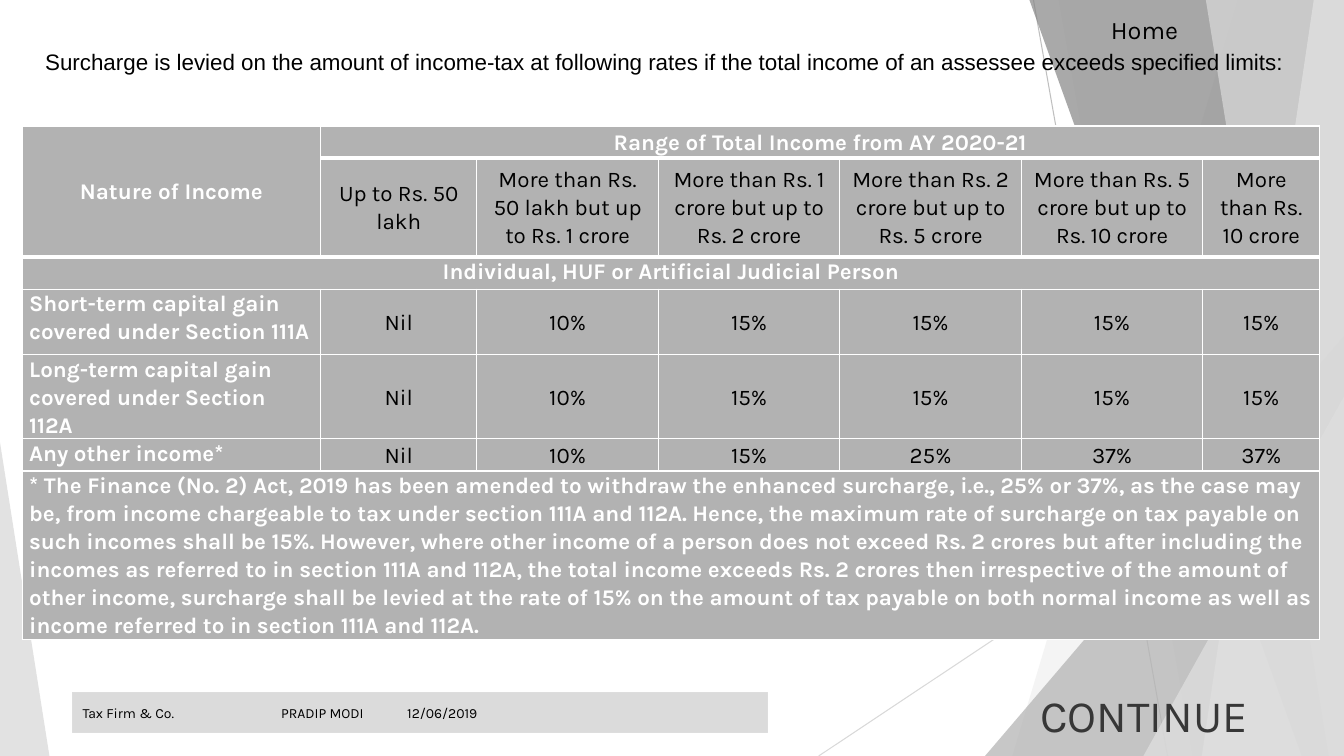
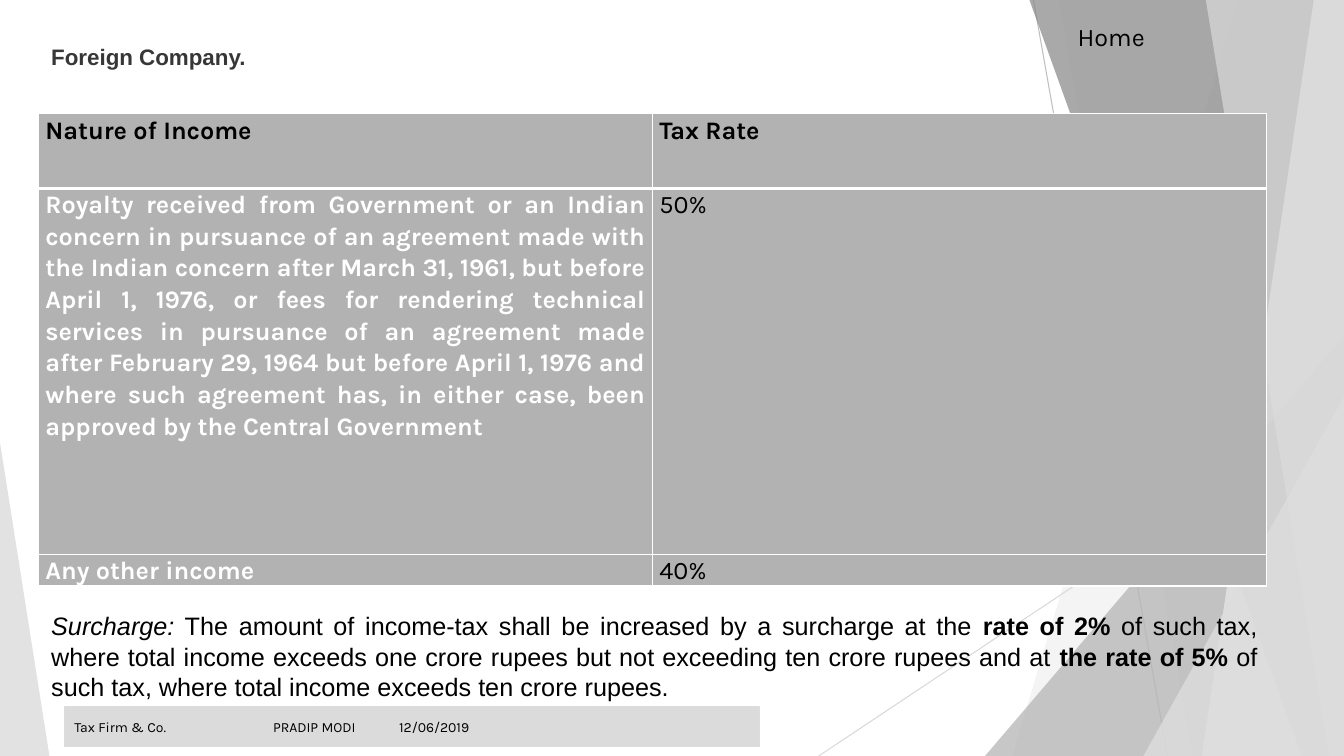
"""Build two slides on surcharge and tax rates with a shared faceted backdrop."""
import lxml.etree
import pptx
import pptx.dml.color
import pptx.enum.shapes
import pptx.enum.text
import pptx.oxml.ns
import pptx.util

Inches = pptx.util.Inches
Pt = pptx.util.Pt
RGBColor = pptx.dml.color.RGBColor
Align = pptx.enum.text.PP_ALIGN
Anchor = pptx.enum.text.MSO_ANCHOR
Preset = pptx.enum.shapes.MSO_SHAPE
qn = pptx.oxml.ns.qn

WHITE = RGBColor(0xFF, 0xFF, 0xFF)
BLACK = RGBColor(0, 0, 0)
CHARCOAL = RGBColor(0x37, 0x37, 0x37)
DARK_GREY = RGBColor(0x85, 0x85, 0x85)
MID_GREY = RGBColor(0xB2, 0xB2, 0xB2)
LINE_GREY = RGBColor(0xBF, 0xBF, 0xBF)
LIGHT_LINE = RGBColor(0xD9, 0xD9, 0xD9)
PALE_GREY = RGBColor(0xDD, 0xDD, 0xDD)
FAINT_GREY = RGBColor(0xEB, 0xEB, 0xEB)

WIDTH, HEIGHT = 13.33, 7.5
BODY_FONT, PLAIN_FONT = "Karla", "Arial"

RAYS = [((10.25, 0), (11.58, HEIGHT), LINE_GREY),
        ((WIDTH, 4.03), (8.12, HEIGHT), LIGHT_LINE)]
FACETS = [
    {"band": (12.28, 10.04), "colour": PALE_GREY, "opacity": 30},
    {"band": (10.5, 11.83), "colour": PALE_GREY, "opacity": 20},
    {"triangle": (9.77, 3.33, 3.56), "peak": 1, "colour": MID_GREY, "opacity": 72},
    {"band": (10.21, 12.91), "colour": DARK_GREY, "opacity": 70},
    {"band": (13.03, 11.92), "colour": FAINT_GREY, "opacity": 70},
    {"band": (11.96, 13.18), "colour": PALE_GREY, "opacity": 65},
    {"triangle": (11.34, 3.93, 1.99), "peak": 1, "colour": PALE_GREY, "opacity": 80},
    {"triangle": (0, 4.39, 0.49), "peak": 0, "colour": PALE_GREY, "opacity": 85},
]

FOOTER = ["Tax Firm & Co.", "PRADIP MODI", "12/06/2019"]
FOOTER_TABS = [1.97, 3.22]

CELL_STYLES = {
    "heading": (WHITE, True, Align.CENTER, Anchor.MIDDLE),
    "band": (WHITE, True, Align.CENTER, Anchor.TOP),
    "label": (WHITE, True, Align.LEFT, Anchor.TOP),
    "value": (BLACK, False, Align.CENTER, Anchor.MIDDLE),
    "column": (BLACK, True, Align.JUSTIFY, Anchor.TOP),
    "clause": (WHITE, True, Align.JUSTIFY, Anchor.TOP),
    "rate": (BLACK, False, Align.JUSTIFY, Anchor.TOP),
}

SURCHARGE_TABLE = {
    "place": (0.22, 1.25),
    "columns": [2.96, 1.55, 1.8, 1.8, 1.8, 1.8, 1.16],
    "size": 16,
    "header_rows": 2,
    "merges": [(0, 0, 1, 0), (0, 1, 0, 6), (2, 0, 2, 6), (6, 0, 6, 6)],
    "rows": [
        (0.32, "heading", "heading",
         ["Nature of Income", "Range of Total Income from AY 2020-21"]),
        (0.98, "heading", "value",
         ["", "Up to Rs. 50 lakh", "More than Rs. 50 lakh but up to Rs. 1 crore",
          "More than Rs. 1 crore but up to Rs. 2 crore",
          "More than Rs. 2 crore but up to Rs. 5 crore",
          "More than Rs. 5 crore but up to Rs. 10 crore", "More than Rs. 10 crore"]),
        (0.32, "band", "band", ["Individual, HUF or Artificial Judicial Person"]),
        (0.65, "label", "value",
         ["Short-term capital gain covered under Section 111A",
          "Nil", "10%", "15%", "15%", "15%", "15%"]),
        (0.65, "label", "value",
         ["Long-term capital gain covered under Section 112A",
          "Nil", "10%", "15%", "15%", "15%", "15%"]),
        (0.32, "label", "value",
         ["Any other income*", "Nil", "10%", "15%", "25%", "37%", "37%"]),
        (1.65, "label", "label",
         ["* The Finance (No. 2) Act, 2019 has been amended to withdraw the enhanced "
          "surcharge, i.e., 25% or 37%, as the case may be, from income chargeable to tax "
          "under section 111A and 112A. Hence, the maximum rate of surcharge on tax payable "
          "on such incomes shall be 15%. However, where other income of a person does not "
          "exceed Rs. 2 crores but after including the incomes as referred to in section "
          "111A and 112A, the total income exceeds Rs. 2 crores then irrespective of the "
          "amount of other income, surcharge shall be levied at the rate of 15% on the "
          "amount of tax payable on both normal income as well as income referred to in "
          "section 111A and 112A."]),
    ],
}

FOREIGN_TABLE = {
    "place": (0.38, 1.13),
    "columns": [6.09, 6.09],
    "size": 18,
    "header_rows": 1,
    "merges": [],
    "rows": [
        (0.74, "column", "column", ["Nature of Income", "Tax Rate"]),
        (3.63, "clause", "rate",
         ["Royalty received from Government or an Indian concern in pursuance of an "
          "agreement made with the Indian concern after March 31, 1961, but before April 1, "
          "1976, or fees for rendering technical services in pursuance of an agreement made "
          "after February 29, 1964 but before April 1, 1976 and where such agreement has, "
          "in either case, been approved by the Central Government", "50%"]),
        (0.31, "clause", "rate", ["Any other income", "40%"]),
    ],
}

SURCHARGE_INTRO = ("Surcharge is levied on the amount of income-tax at following rates if the "
                   "total income of an assessee exceeds specified limits:")
SURCHARGE_NOTE = [
    ("Surcharge:", {"italic": True}),
    (" The amount of income-tax shall be increased by a surcharge at the ", {}),
    ("rate of 2%", {"bold": True}),
    (" of such tax, where total income exceeds one crore rupees but not exceeding ten crore "
     "rupees and at ", {}),
    ("the rate of 5%", {"bold": True}),
    (" of such tax, where total income exceeds ten crore rupees.", {}),
]

SLIDES = [
    {
        "table": SURCHARGE_TABLE,
        "texts": [
            ((0.35, 0.43, 12.64, 0.37), [(SURCHARGE_INTRO, {})],
             {"size": 16, "font": PLAIN_FONT, "align": Align.JUSTIFY, "anchor": Anchor.MIDDLE}),
            ((10.22, 6.77, 3.1, 0.64), [("CONTINUE", {})], {"size": 32, "colour": CHARCOAL}),
        ],
        "footer": (0.72, 6.87),
        "home": (10.92, 0.09),
    },
    {
        "table": FOREIGN_TABLE,
        "texts": [
            ((0.41, 0.36, 11.84, 0.4), [("Foreign Company.", {"bold": True})],
             {"size": 16, "font": PLAIN_FONT, "colour": CHARCOAL, "anchor": Anchor.MIDDLE}),
            ((0.41, 6.01, 12.16, 1.01), SURCHARGE_NOTE,
             {"size": 18, "font": PLAIN_FONT, "align": Align.JUSTIFY}),
        ],
        "footer": (0.64, 7.01),
        "home": (10.59, 0.16),
    },
]


def set_attributes(target, values):
    for name, value in values.items():
        setattr(target, name, value)


def write(frame, runs, size, font=BODY_FONT, colour=BLACK, align=Align.LEFT, anchor=Anchor.TOP):
    set_attributes(frame, {"word_wrap": True, "vertical_anchor": anchor})
    paragraph = frame.paragraphs[0]
    paragraph.alignment = align
    for text, emphasis in runs:
        run = paragraph.add_run()
        run.text = text
        set_attributes(run.font, {"size": Pt(size), "name": font, **emphasis})
        run.font.color.rgb = colour
    return paragraph


def fill_translucent(shape, colour, opacity):
    shape.shadow.inherit = False
    shape.fill.solid()
    shape.fill.fore_color.rgb = colour
    colour_element = shape.fill._xPr.find(qn("a:solidFill"))[0]
    lxml.etree.SubElement(colour_element, qn("a:alpha"), val=str(opacity * 1000))


def add_backdrop(slide):
    for start, end, colour in RAYS:
        ray = slide.shapes.add_connector(
            pptx.enum.shapes.MSO_CONNECTOR.STRAIGHT, *map(Inches, start + end))
        ray.line.color.rgb = colour
        ray.line.width = Pt(0.75)
        lxml.etree.SubElement(ray._element.spPr, qn("a:effectLst"))
    for facet in FACETS:
        if "band" in facet:
            top_left, bottom_left = facet["band"]
            corners = [(WIDTH, 0), (WIDTH, HEIGHT), (bottom_left, HEIGHT)]
            builder = slide.shapes.build_freeform(Inches(top_left), 0)
            builder.add_line_segments([(Inches(x), Inches(y)) for x, y in corners], close=True)
            shape = builder.convert_to_shape()
        else:
            left, top, width = facet["triangle"]
            shape = slide.shapes.add_shape(
                Preset.ISOSCELES_TRIANGLE, *map(Inches, (left, top, width, HEIGHT - top)))
            shape.adjustments[0] = facet["peak"]
        fill_translucent(shape, facet["colour"], facet["opacity"])
        shape.line.fill.background()


def add_text(slide, box, runs, style):
    text_box = slide.shapes.add_textbox(*map(Inches, box))
    write(text_box.text_frame, runs, **style)


def add_footer(slide, left, top):
    bar = slide.shapes.add_shape(Preset.RECTANGLE, *map(Inches, (left, top, 6.89, 0.4)))
    fill_translucent(bar, MID_GREY, 46)
    bar.line.color.rgb = PALE_GREY
    bar.line.width = Pt(0.75)
    paragraph = write(bar.text_frame, [("\t".join(FOOTER), {})], 10, anchor=Anchor.MIDDLE)
    tab_list = lxml.etree.SubElement(paragraph._p.get_or_add_pPr(), qn("a:tabLst"))
    for position in FOOTER_TABS:
        lxml.etree.SubElement(tab_list, qn("a:tab"), pos=str(Inches(position)), algn="l")


def add_borders(cell, top, bottom):
    properties = cell._tc.get_or_add_tcPr()
    for side, points in (("L", 1), ("R", 1), ("T", top), ("B", bottom)):
        line = lxml.etree.SubElement(properties, qn("a:ln" + side), w=str(Pt(points)))
        solid = lxml.etree.SubElement(line, qn("a:solidFill"))
        lxml.etree.SubElement(solid, qn("a:srgbClr"), val=str(WHITE))


def add_rate_table(slide, content):
    rows, columns, header_rows = content["rows"], content["columns"], content["header_rows"]
    size = (sum(columns), sum(row[0] for row in rows))
    table = slide.shapes.add_table(
        len(rows), len(columns), *map(Inches, content["place"] + size)).table
    set_attributes(table, {"first_row": False, "horz_banding": False})
    for column, width in zip(table.columns, columns):
        column.width = Inches(width)
    for row_index, (height, first_style, other_style, texts) in enumerate(rows):
        table.rows[row_index].height = Inches(height)
        top = 3 if 0 < row_index <= header_rows else 1
        bottom = 3 if row_index < header_rows else 1
        for column_index, cell in enumerate(table.rows[row_index].cells):
            set_attributes(cell, {"margin_left": Inches(0.07), "margin_right": Inches(0.07),
                                  "margin_top": 0, "margin_bottom": 0})
            add_borders(cell, top, bottom)
            cell.fill.solid()
            cell.fill.fore_color.rgb = MID_GREY
            if column_index < len(texts) and texts[column_index]:
                style = first_style if column_index == 0 else other_style
                colour, bold, align, anchor = CELL_STYLES[style]
                paragraph = write(cell.text_frame, [(texts[column_index], {"bold": bold})],
                                  content["size"], colour=colour, align=align)
                set_attributes(paragraph, {"line_spacing": 1.07, "space_after": Pt(8)})
                cell.vertical_anchor = anchor
    for first_row, first_column, last_row, last_column in content["merges"]:
        table.cell(first_row, first_column).merge(table.cell(last_row, last_column))


def main():
    presentation = pptx.Presentation()
    set_attributes(presentation, {"slide_width": Inches(WIDTH), "slide_height": Inches(HEIGHT)})
    for content in SLIDES:
        slide = presentation.slides.add_slide(presentation.slide_layouts[6])
        add_backdrop(slide)
        add_rate_table(slide, content["table"])
        for box, runs, style in content["texts"]:
            add_text(slide, box, runs, style)
        add_footer(slide, *content["footer"])
        add_text(slide, content["home"] + (2.07, 0.4), [("Home", {})], {"size": 18})
    presentation.save("out.pptx")


if __name__ == "__main__":
    main()
